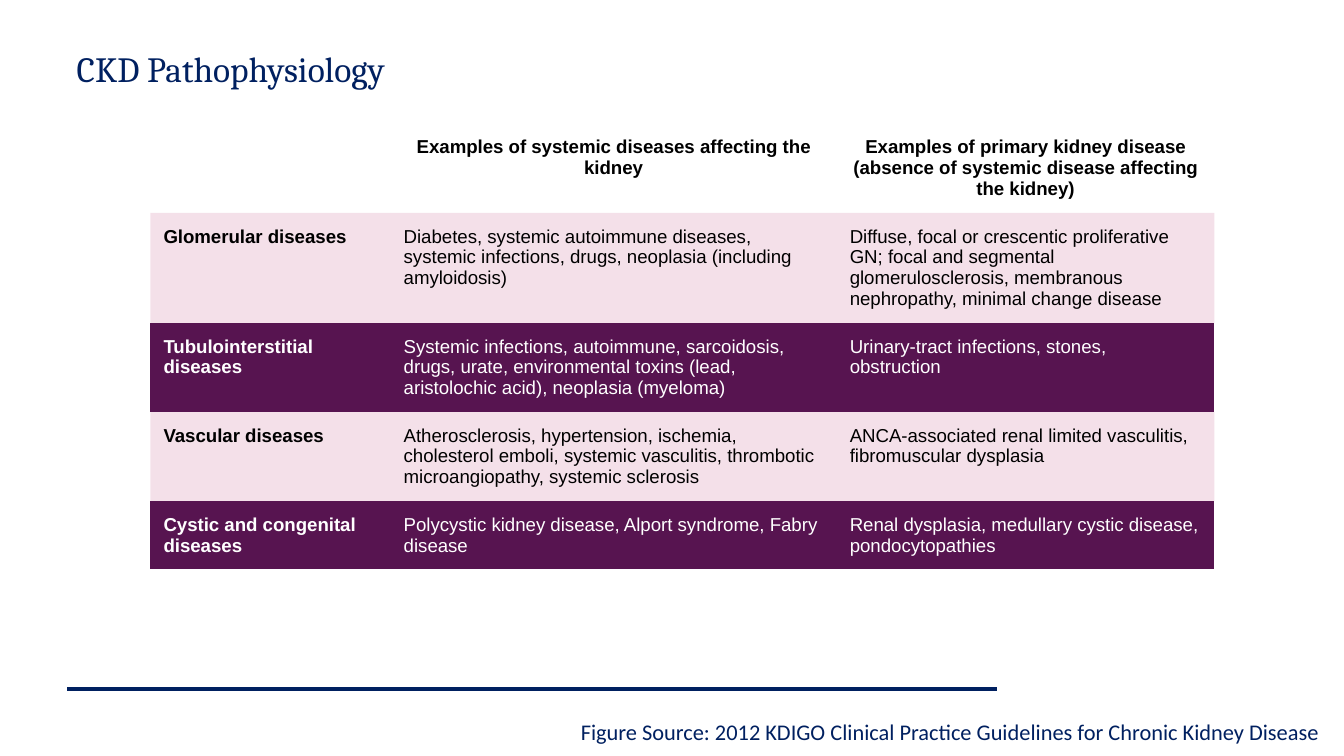
from lxml import etree
from pptx import Presentation
from pptx.dml.color import RGBColor
from pptx.enum.shapes import MSO_CONNECTOR
from pptx.enum.text import MSO_ANCHOR, MSO_AUTO_SIZE, PP_ALIGN
from pptx.oxml.ns import qn
from pptx.util import Cm, Pt

STRAIGHT = MSO_CONNECTOR.STRAIGHT
TOP, MIDDLE, BOTTOM = MSO_ANCHOR.TOP, MSO_ANCHOR.MIDDLE, MSO_ANCHOR.BOTTOM
NO_FIT = MSO_AUTO_SIZE.NONE
LEFT, CENTER, RIGHT = PP_ALIGN.LEFT, PP_ALIGN.CENTER, PP_ALIGN.RIGHT

NAVY, WHITE, BLACK = "002060", "FFFFFF", "000000"
PLUM, ROSE = "571450", "A8034F"
ROSE_ALPHA = 12
PLAIN_TABLE = "{2D5ABB26-0587-4C30-8999-92F81FD0307C}"

COLUMN_WIDTHS = (4.54, 8.43, 7.14)
HEADER_HEIGHT, ROW_HEIGHT = 1.65, 1.07
CELL_MARGIN = 0.25

DISEASES = [
    ("",
     "Examples of systemic diseases affecting the kidney",
     "Examples of primary kidney disease (absence of systemic disease affecting the kidney)"),
    ("Glomerular diseases",
     "Diabetes, systemic autoimmune diseases, systemic infections, drugs, neoplasia "
     "(including amyloidosis)",
     "Diffuse, focal or crescentic proliferative GN; focal and segmental "
     "glomerulosclerosis, membranous nephropathy, minimal change disease"),
    ("Tubulointerstitial diseases",
     "Systemic infections, autoimmune, sarcoidosis, drugs, urate, environmental toxins "
     "(lead, aristolochic acid), neoplasia (myeloma)",
     "Urinary-tract infections, stones, obstruction"),
    ("Vascular diseases",
     "Atherosclerosis, hypertension, ischemia, cholesterol emboli, systemic vasculitis, "
     "thrombotic microangiopathy, systemic sclerosis",
     "ANCA-associated renal limited vasculitis, fibromuscular dysplasia"),
    ("Cystic and congenital diseases",
     "Polycystic kidney disease, Alport syndrome, Fabry disease",
     "Renal dysplasia, medullary cystic disease, pondocytopathies"),
]


def paint(color_format, color):
    """Set a colour from a hex string."""
    color_format.rgb = RGBColor.from_string(color)


def style(para, font, size, color, align, bold=False):
    """Format a whole paragraph."""
    para.alignment = align
    para.font.name = font
    para.font.size = Pt(size)
    para.font.bold = bold
    paint(para.font.color, color)


def set_margins(target, side, end):
    """Set the inner margins of a text frame or a cell, in centimetres."""
    target.margin_left = target.margin_right = Cm(side)
    target.margin_top = target.margin_bottom = Cm(end)


def fill_placeholder(holder, box, text, font, size, align, anchor):
    """Move a placeholder to its box and write one unbulleted navy line."""
    holder.left, holder.top, holder.width, holder.height = map(Cm, box)
    frame = holder.text_frame
    frame.text = text
    frame.word_wrap = True
    frame.auto_size = NO_FIT
    frame.vertical_anchor = anchor
    set_margins(frame, 0.18, 0.1)
    para = frame.paragraphs[0]
    properties = para._p.get_or_add_pPr()
    properties.set("marL", "0")
    properties.set("indent", "0")
    etree.SubElement(properties, qn("a:buNone"))
    para.space_before = Pt(0)
    style(para, font, size, NAVY, align)


def fill_cell(cell, text, row, column):
    """Write one table cell with the colours of its row."""
    header, dark = row == 0, row > 0 and row % 2 == 0
    cell.fill.solid()
    paint(cell.fill.fore_color, WHITE if header else PLUM if dark else ROSE)
    if not header and not dark:
        color = cell._tc.tcPr.find(f".//{qn('a:srgbClr')}")
        etree.SubElement(color, qn("a:alpha"), val=str(ROSE_ALPHA * 1000))
    set_margins(cell, CELL_MARGIN, CELL_MARGIN)
    cell.vertical_anchor = TOP
    cell.text = text
    style(cell.text_frame.paragraphs[0], "Arial", 10, WHITE if dark else BLACK,
          CENTER if header else LEFT, header or column == 0)


def add_disease_table(page, left, top):
    """Place the table of kidney diseases."""
    heights = [HEADER_HEIGHT] + [ROW_HEIGHT] * (len(DISEASES) - 1)
    table = page.shapes.add_table(
        len(DISEASES), len(COLUMN_WIDTHS), Cm(left), Cm(top),
        Cm(sum(COLUMN_WIDTHS)), Cm(sum(heights))).table
    table.horz_banding = False
    table._tbl.tblPr.find(qn("a:tableStyleId")).text = PLAIN_TABLE
    for column, width in zip(table.columns, COLUMN_WIDTHS):
        column.width = Cm(width)
    for row, height in zip(table.rows, heights):
        row.height = Cm(height)
    for row, texts in enumerate(DISEASES):
        for column, text in enumerate(texts):
            fill_cell(table.cell(row, column), text, row, column)


def add_footer_rule(page, left, top, width):
    """Draw the navy rule above the source line."""
    rule = page.shapes.add_connector(
        STRAIGHT, Cm(left), Cm(top), Cm(left + width), Cm(top))
    rule.line.width = Pt(2)
    paint(rule.line.color, NAVY)
    etree.SubElement(rule._element.spPr, qn("a:effectLst"))


def main():
    """Build and save the slide."""
    deck = Presentation()
    deck.slide_width, deck.slide_height = Cm(25.4), Cm(14.28)
    page = deck.slides.add_slide(deck.slide_layouts[1])
    add_footer_rule(page, 1.27, 13.01, 17.58)
    fill_placeholder(page.shapes.title, (1.27, 0.81, 22.86, 0.99),
                     "CKD Pathophysiology", "Cambria", 19, LEFT, BOTTOM)
    add_disease_table(page, 2.84, 2.34)
    fill_placeholder(
        page.placeholders[1], (5.28, 13.49, 19.94, 0.66),
        "Figure Source: 2012 KDIGO Clinical Practice Guidelines for Chronic Kidney Disease ",
        "Calibri", 12, RIGHT, MIDDLE)
    deck.save("out.pptx")


if __name__ == "__main__":
    main()
